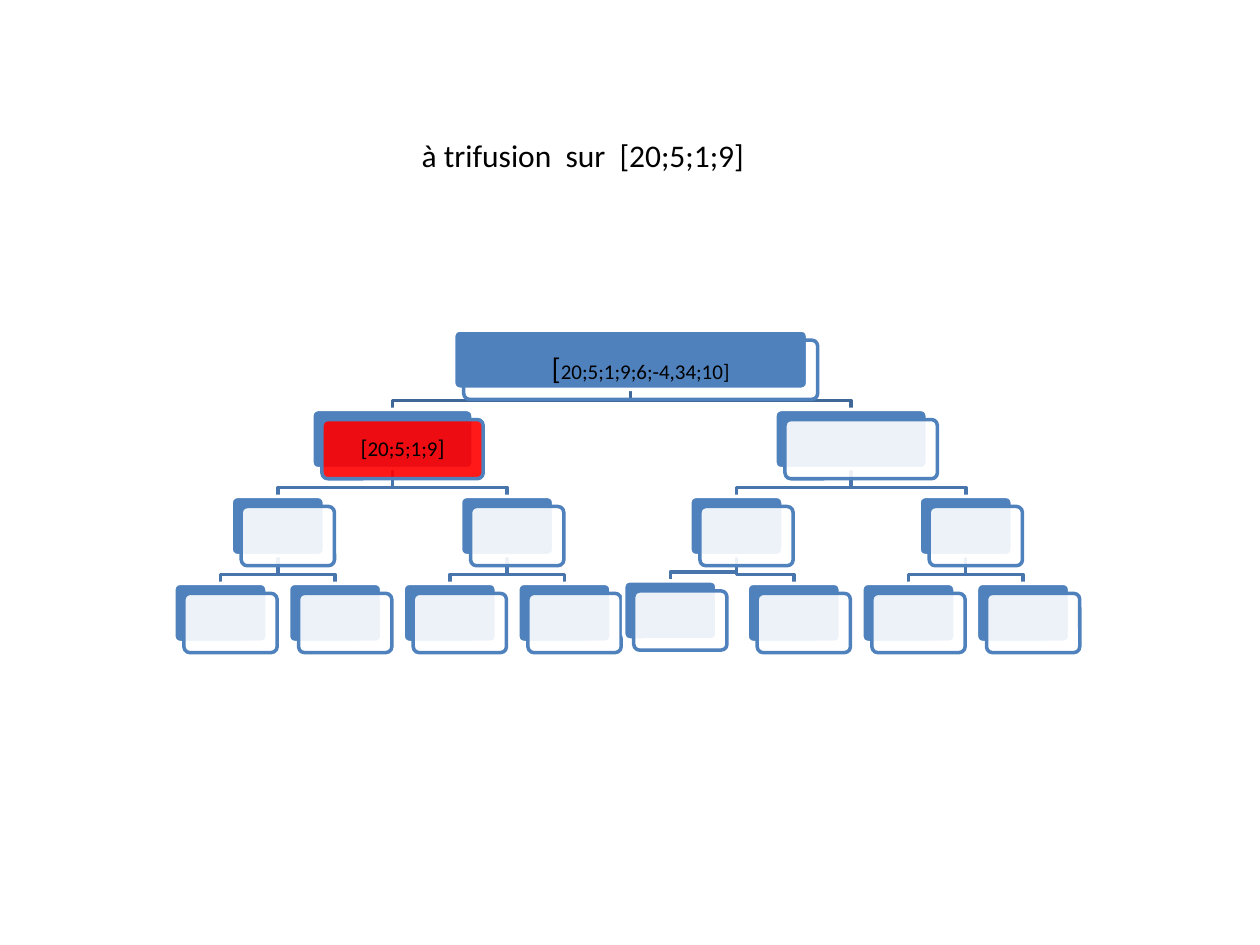
from lxml import etree
from pptx import Presentation
from pptx import util as u
from pptx.dml.color import RGBColor
from pptx.enum import shapes, text
from pptx.oxml.ns import qn

COLORS = {"blue": "4F81BD", "white": "FFFFFF", "red": "FF0000", "black": "000000",
          "link_top": "3F6797", "link": "4875AC"}
FONT = "Calibri"
PITCH = 0.91            # distance between leaf centres
NODE_H = 0.47
OFFSET = 0.08           # shift of the front card from the back card
ROW_TOPS = [2.62, 3.25, 3.94, 4.63]
ROW_WIDTHS = [2.81, 1.21, 0.74, 0.74]
# Nodes that leave the regular grid: (level, index) -> (dx, dy, extra width)
NUDGES = {(0, 0): (0.07, 0, 0), (1, 0): (0, 0, 0.07), (3, 4): (-0.07, -0.02, 0)}
# (level, index) -> runs of (text, size)
LABELS = {(0, 0): [("[", 17), ("20;5;1;9;6;-4,34;10]", 12)],
          (1, 0): [("[", 13), ("20;5;1;9", 12), ("]", 13)]}
FILLS = {(0, 0): None, (1, 0): "red"}


def rgb(name):
    return RGBColor.from_string(COLORS[name])


def add_run(p, content, size):
    r = p.add_run()
    r.text = content
    r.font.name, r.font.size = FONT, u.Pt(size)
    r.font.color.rgb = rgb("black")


def node_box(level, i):
    """Centre x, top and width of a node's back card."""
    dx, dy, extra = NUDGES.get((level, i), (0, 0, 0))
    span = 2 ** (3 - level)     # leaves below this node
    x = 1.75 + PITCH * (span * i + (span - 1) / 2)
    return x + dx, ROW_TOPS[level] + dy, ROW_WIDTHS[level] + extra


def add_card(s, x, y, w, fill, line):
    sp = s.shapes.add_shape(shapes.MSO_SHAPE.ROUNDED_RECTANGLE,
                            *map(u.Inches, (x, y, w, NODE_H)))
    sp.adjustments[0] = 0.1
    sp.shadow.inherit = False
    sp.line.color.rgb, sp.line.width = rgb(line), u.Pt(2)
    if fill:
        sp.fill.solid()
        sp.fill.fore_color.rgb = rgb(fill)
    else:
        sp.fill.background()
    return sp


def add_node(s, level, i):
    x, y, w = node_box(level, i)
    key = (level, i)
    add_card(s, x - w / 2, y, w, "blue", "white")
    fill = FILLS.get(key, "white")
    sp = add_card(s, x - w / 2 + OFFSET, y + OFFSET, w, fill, "blue")
    if fill:
        clr = sp.fill._xPr.find(".//" + qn("a:srgbClr"))
        etree.SubElement(clr, qn("a:alpha"), val="90000")
    if key in LABELS:
        tf = sp.text_frame
        tf.word_wrap = True
        tf.vertical_anchor = text.MSO_ANCHOR.MIDDLE
        tf.margin_left = tf.margin_right = tf.margin_top = tf.margin_bottom = u.Inches(0.07)
        p = tf.paragraphs[0]
        p.alignment, p.line_spacing = text.PP_ALIGN.CENTER, 0.9
        for content, size in LABELS[key]:
            add_run(p, content, size)


def add_link(s, level, i):
    """Elbow line from the parent down to node i of this level."""
    px, py, _ = node_box(level - 1, i // 2)
    x, y, _ = node_box(level, i)
    bend = y - 0.07
    points = [(px, py + NODE_H), (px, bend), (x, bend), (x, y)]
    points = [(u.Inches(a), u.Inches(b)) for a, b in points]
    fb = s.shapes.build_freeform(*points[0])
    fb.add_line_segments(points[1:], close=False)
    sp = fb.convert_to_shape()
    sp.shadow.inherit = False
    sp.fill.background()
    sp.line.color.rgb = rgb("link_top" if level == 1 else "link")
    sp.line.width = u.Pt(2)


def add_tree(s):
    nodes = [(level, i) for level in range(4) for i in range(2 ** level)]
    for level, i in nodes[1:]:
        add_link(s, level, i)
    for level, i in nodes:
        add_node(s, level, i)


def add_title(s, x, y, w, h):
    sp = s.shapes.title
    sp.left, sp.top, sp.width, sp.height = map(u.Inches, (x, y, w, h))
    tf = sp.text_frame
    tf.word_wrap = True
    tf.auto_size = text.MSO_AUTO_SIZE.NONE
    tf.vertical_anchor = text.MSO_ANCHOR.TOP
    p = tf.paragraphs[0]
    p.alignment = text.PP_ALIGN.LEFT
    add_run(p, " à trifusion  sur  [20;5;1;9]", 18)


def main():
    prs = Presentation()
    prs.slide_width, prs.slide_height = u.Inches(10), u.Inches(7.5)
    s = prs.slides.add_slide(prs.slide_layouts[5])
    add_title(s, 3.19, 1.03, 3.46, 0.71)
    add_tree(s)
    prs.save("out.pptx")


if __name__ == "__main__":
    main()
